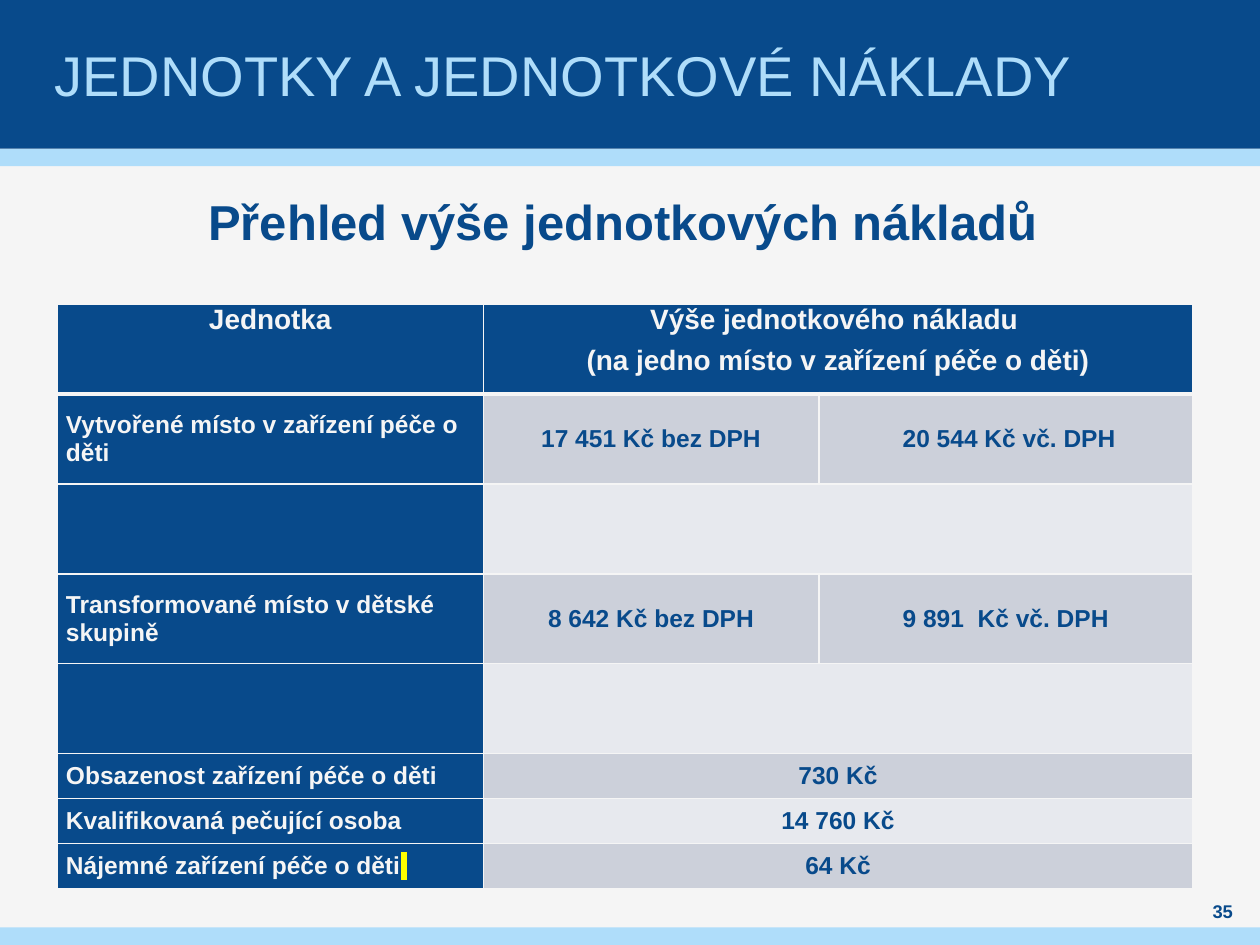
from lxml import etree
from pptx import Presentation
from pptx.dml.color import RGBColor
from pptx.enum.shapes import MSO_SHAPE
from pptx.enum.text import MSO_ANCHOR, PP_ALIGN
from pptx.oxml.ns import qn
from pptx.util import Pt

RECT = MSO_SHAPE.RECTANGLE
TOP, MIDDLE = MSO_ANCHOR.TOP, MSO_ANCHOR.MIDDLE
LEFT, CENTER = PP_ALIGN.LEFT, PP_ALIGN.CENTER

NAVY, SKY, PAPER = "084A8B", "AFDDFA", "F5F5F5"
BAND_DARK, BAND_LIGHT, YELLOW = "CCD0DA", "E7E9EE", "FFFF00"


def rgb(color):
    return RGBColor.from_string(color)


def add_color(parent, tag, color):
    el = etree.SubElement(parent, qn(tag))
    etree.SubElement(el, qn("a:srgbClr"), val=color)
    return el


class Deck:
    font = "Arial"

    def __init__(self, width, height):
        self.prs = Presentation()
        self.prs.slide_width, self.prs.slide_height = Pt(width), Pt(height)

    def new_slide(self, background):
        self.s = self.prs.slides.add_slide(self.prs.slide_layouts[6])
        fill = self.s.background.fill
        fill.solid()
        fill.fore_color.rgb = rgb(background)

    def bar(self, top, height, color):
        sp = self.s.shapes.add_shape(RECT, 0, Pt(top), self.prs.slide_width, Pt(height))
        sp.shadow.inherit = False
        sp.fill.solid()
        sp.fill.fore_color.rgb = rgb(color)
        sp.line.fill.background()

    def run(self, p, text, size, color, bold=True, highlight=None):
        r = p.add_run()
        r.text = text
        r.font.size, r.font.bold = Pt(size), bold
        r.font.color.rgb = rgb(color)
        if highlight:
            add_color(r.font._element, "a:highlight", highlight)
        r.font.name = self.font

    def text(self, box, text, size, color, bold=True, align=CENTER,
             anchor=MIDDLE, margins=(0, 0)):
        sp = self.s.shapes.add_textbox(*map(Pt, box))
        tf = sp.text_frame
        tf.word_wrap, tf.vertical_anchor = True, anchor
        tf.margin_left = tf.margin_right = Pt(margins[0])
        tf.margin_top = tf.margin_bottom = Pt(margins[1])
        p = tf.paragraphs[0]
        p.alignment = align
        self.run(p, text, size, color, bold)

    def table(self, left, top, widths, heights):
        frame = self.s.shapes.add_table(len(heights), len(widths), Pt(left), Pt(top),
                                        Pt(sum(widths)), Pt(sum(heights)))
        tbl = frame.table
        for col, width in zip(tbl.columns, widths):
            col.width = Pt(width)
        for row, height in zip(tbl.rows, heights):
            row.height = Pt(height)
        return tbl

    def cell_style(self, cell, fill, top=1, bottom=1):
        tc_pr = cell._tc.get_or_add_tcPr()
        for side, width in zip("LRTB", (1, 1, top, bottom)):
            ln = etree.SubElement(tc_pr, qn("a:ln" + side), w=str(Pt(width)))
            add_color(ln, "a:solidFill", PAPER)
        cell.fill.solid()
        cell.fill.fore_color.rgb = rgb(fill)

    def cell_text(self, cell, lines, size, color, align, anchor):
        cell.vertical_anchor = anchor
        cell.margin_left = cell.margin_right = Pt(5)
        cell.margin_top = cell.margin_bottom = 0
        tf = cell.text_frame
        for i, line in enumerate(lines):
            p = tf.add_paragraph() if i else tf.paragraphs[0]
            p.alignment = align
            p.space_before = p.space_after = Pt(3)
            self.run(p, line, size, color)


HEADER = [["Jednotka"], ["Výše jednotkového nákladu ", "(na jedno místo v zařízení péče o děti)"]]
# Unit and its costs; a single cost spans both cost columns
ROWS = [
    ("Vytvořené místo v zařízení péče o děti", "17 451 Kč bez DPH", " 20 544 Kč vč. DPH"),
    ("", ""),
    ("Transformované místo v dětské skupině", "8 642 Kč bez DPH", "9 891  Kč vč. DPH"),
    ("", ""),
    ("Obsazenost zařízení péče o děti", "730 Kč"),
    ("Kvalifikovaná pečující osoba", "14 760 Kč"),
    ("Nájemné zařízení péče o děti", "64 Kč"),
]


def main():
    deck = Deck(720, 540)
    deck.new_slide(PAPER)

    # Header and footer bars
    deck.bar(85, 10, SKY)
    deck.bar(0, 85, NAVY)
    deck.bar(530, 10, SKY)

    # Title, page number, subtitle
    deck.text((28, 0, 663, 85), "JEDNOTKY A JEDNOTKOVÉ NÁKLADY", 32, SKY,
              bold=False, align=LEFT, margins=(3, 0))
    deck.text((680.5, 513.5, 36.5, 14), "35", 10.5, NAVY)
    deck.text((64, 106, 584, 41), "Přehled výše jednotkových nákladů", 28, NAVY,
              anchor=TOP, margins=(7.2, 3.6))

    # Cost table: header
    tbl = deck.table(32.7, 173.7, [243.5, 191.7, 213.7], [51.4] * 5 + [25.7] * 3)
    for cell in tbl.rows[0].cells:
        deck.cell_style(cell, NAVY, bottom=3)
    tbl.cell(0, 1).merge(tbl.cell(0, 2))
    for col, lines in enumerate(HEADER):
        deck.cell_text(tbl.cell(0, col), lines, 16, PAPER, CENTER, TOP)

    # Cost table: body
    for row, texts in enumerate(ROWS, start=1):
        band = BAND_DARK if row % 2 else BAND_LIGHT
        for col, cell in enumerate(tbl.rows[row].cells):
            deck.cell_style(cell, band if col else NAVY, top=3 if row == 1 else 1)
        if len(texts) == 2:
            tbl.cell(row, 1).merge(tbl.cell(row, 2))
        for col, text in enumerate(texts):
            if text:
                deck.cell_text(tbl.cell(row, col), [text], 14, NAVY if col else PAPER,
                               CENTER if col else LEFT, MIDDLE)

    # Highlighted space after the last unit
    p = tbl.cell(len(ROWS), 0).text_frame.paragraphs[0]
    deck.run(p, " ", 14, PAPER, highlight=YELLOW)

    deck.prs.save("out.pptx")


if __name__ == "__main__":
    main()
